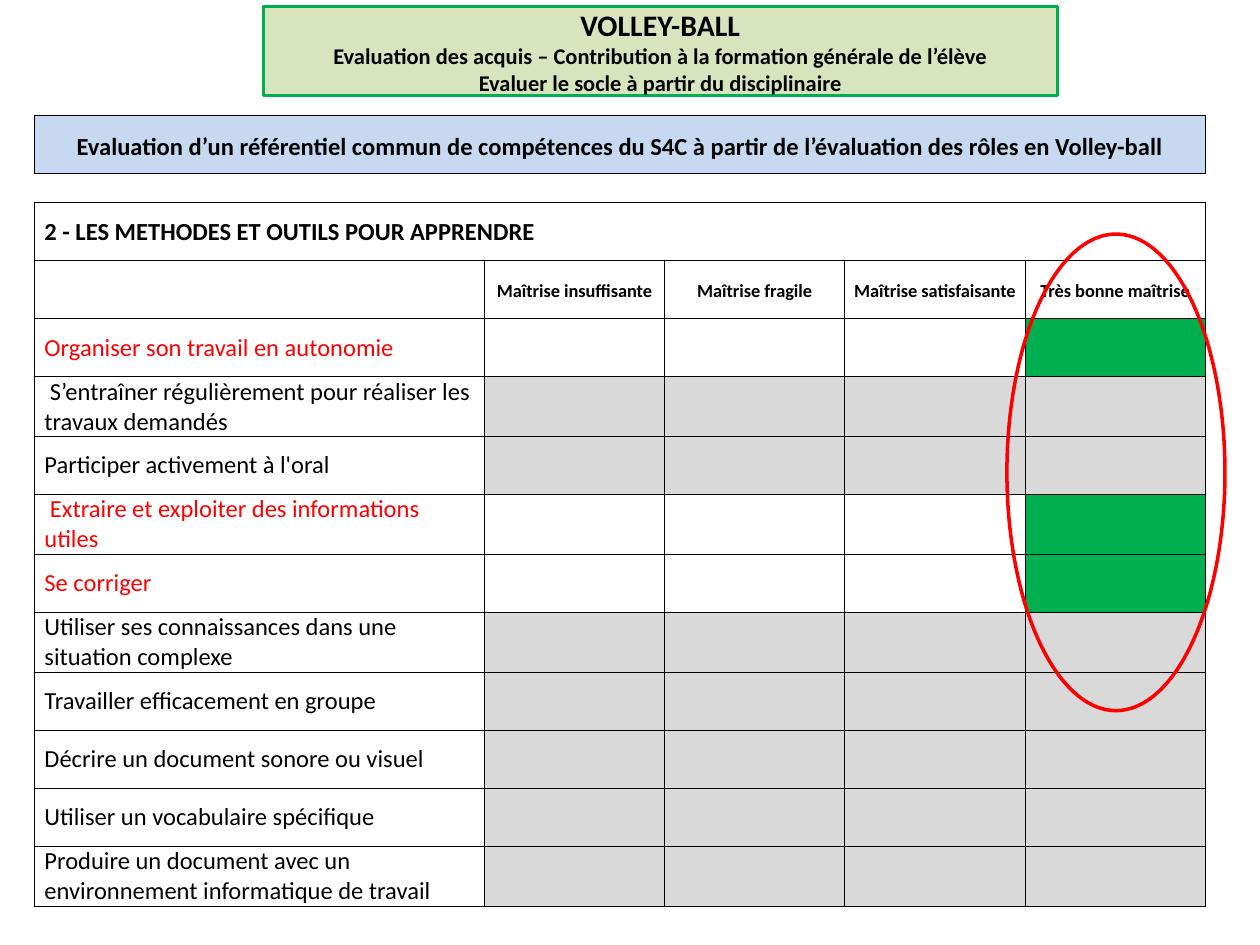
"""Build the volleyball assessment slide with its table of learning skills."""
from dataclasses import dataclass

from lxml.etree import SubElement
from pptx import Presentation
from pptx.dml.color import RGBColor
from pptx.enum.shapes import MSO_SHAPE
from pptx.enum.text import MSO_ANCHOR, MSO_AUTO_SIZE, PP_ALIGN
from pptx.oxml.ns import qn
from pptx.slide import Slide
from pptx.table import Table, _Cell
from pptx.text.text import _Paragraph
from pptx.util import Pt

COLORS = {
    "black": "000000", "white": "FFFFFF", "red": "FF0000", "green": "00B050",
    "pale_green": "D7E4BD", "pale_blue": "C6D9F1", "grey": "D9D9D9",
}
FONT = "Calibri"
ROW_HEIGHT, SPACER_HEIGHT = 33.2, 16.6
SKILL_WIDTH, LEVEL_WIDTH = 257, 103
BANNER_ROW, SPACER_ROW, HEADING_ROW, LEVEL_ROW, FIRST_SKILL_ROW = range(5)


@dataclass(frozen=True)
class Skill:
    name: str
    assessed: bool = False


@dataclass(frozen=True)
class TextStyle:
    size: float
    bold: bool = False
    color: str = "black"
    alignment: PP_ALIGN = PP_ALIGN.LEFT
    line_spacing: float = 1.0


TITLE_LINES = [
    ("VOLLEY-BALL", 17),
    ("Evaluation des acquis – Contribution à la formation générale de l’élève", 12.8),
    ("Evaluer le socle à partir du disciplinaire", 12.8),
]
BANNER = ("Evaluation d’un référentiel commun de compétences du S4C "
          "à partir de l’évaluation des rôles en Volley-ball")
HEADING = "2 - LES METHODES ET OUTILS POUR APPRENDRE"
LEVELS = ["Maîtrise insuffisante", "Maîtrise fragile",
          "Maîtrise satisfaisante", "Très bonne maîtrise"]
SKILLS = [
    Skill("Organiser son travail en autonomie", True),
    Skill(" S’entraîner régulièrement pour réaliser les travaux demandés"),
    Skill("Participer activement à l'oral"),
    Skill(" Extraire et exploiter des informations utiles", True),
    Skill("Se corriger", True),
    Skill("Utiliser ses connaissances dans une situation complexe"),
    Skill("Travailler efficacement en groupe"),
    Skill("Décrire un document sonore ou visuel"),
    Skill("Utiliser un vocabulaire spécifique"),
    Skill("Produire un document avec un environnement informatique de travail"),
]


def rgb(name: str) -> RGBColor:
    return RGBColor.from_string(COLORS[name])


def write(paragraph: _Paragraph, text: str, style: TextStyle) -> None:
    paragraph.text = text
    paragraph.alignment = style.alignment
    paragraph.line_spacing = style.line_spacing
    font = paragraph.font
    font.name, font.size, font.bold = FONT, Pt(style.size), style.bold
    font.color.rgb = rgb(style.color)


def set_borders(cell: _Cell, width: float, sides: str) -> None:
    properties = cell._tc.get_or_add_tcPr()
    for index, side in enumerate("LRTB"):
        line = SubElement(properties, qn(f"a:ln{side}"), w=str(Pt(width)))
        if side in sides:
            fill = SubElement(line, qn("a:solidFill"))
            SubElement(fill, qn("a:srgbClr"), val=COLORS["black"])
        else:
            SubElement(line, qn("a:noFill"))
        properties.insert(index, line)


def fill_cell(cell: _Cell, text: str, style: TextStyle, margin: float = 0) -> None:
    cell.vertical_anchor = MSO_ANCHOR.MIDDLE
    cell.margin_left = cell.margin_right = Pt(margin)
    cell.margin_top = cell.margin_bottom = 0
    write(cell.text_frame.paragraphs[0], text, style)


def paint(cell: _Cell, color: str) -> None:
    cell.fill.solid()
    cell.fill.fore_color.rgb = rgb(color)


def add_title(slide: Slide) -> None:
    title = slide.shapes.title
    title.left, title.top, title.width, title.height = Pt(150.5), Pt(3.6), Pt(453.6), Pt(51.1)
    title.fill.solid()
    title.fill.fore_color.rgb = rgb("pale_green")
    title.line.color.rgb = rgb("green")
    title.line.width = Pt(1.75)
    frame = title.text_frame
    frame.auto_size = MSO_AUTO_SIZE.NONE
    frame.vertical_anchor = MSO_ANCHOR.MIDDLE
    frame.margin_top = frame.margin_bottom = 0
    for index, (text, size) in enumerate(TITLE_LINES):
        paragraph = frame.add_paragraph() if index else frame.paragraphs[0]
        write(paragraph, text, TextStyle(size, bold=True, alignment=PP_ALIGN.CENTER))


def prepare_grid(table: Table) -> None:
    table.first_row = table.horz_banding = False
    for index, column in enumerate(table.columns):
        column.width = Pt(LEVEL_WIDTH if index else SKILL_WIDTH)
    for index, row in enumerate(table.rows):
        row.height = Pt(SPACER_HEIGHT if index == SPACER_ROW else ROW_HEIGHT)
        for cell in row.cells:
            fill_cell(cell, "", TextStyle(8))
            paint(cell, "pale_blue" if index == BANNER_ROW else "white")
            set_borders(cell, 1 if index == BANNER_ROW else 0.5,
                        "TB" if index == SPACER_ROW else "LRTB")
    for index in (BANNER_ROW, SPACER_ROW, HEADING_ROW):
        table.cell(index, 0).merge(table.cell(index, len(LEVELS)))


def add_skill_table(slide: Slide) -> None:
    row_count = FIRST_SKILL_ROW + len(SKILLS)
    table = slide.shapes.add_table(
        row_count, 1 + len(LEVELS), Pt(19.8), Pt(66),
        Pt(SKILL_WIDTH + LEVEL_WIDTH * len(LEVELS)),
        Pt(ROW_HEIGHT * (row_count - 1) + SPACER_HEIGHT)).table
    prepare_grid(table)
    fill_cell(table.cell(BANNER_ROW, 0), BANNER,
              TextStyle(14, True, alignment=PP_ALIGN.CENTER, line_spacing=1.15))
    fill_cell(table.cell(HEADING_ROW, 0), HEADING, TextStyle(14, True), 5.6)
    level_style = TextStyle(10.5, True, alignment=PP_ALIGN.CENTER, line_spacing=1.15)
    for column, level in enumerate(LEVELS, 1):
        fill_cell(table.cell(LEVEL_ROW, column), level, level_style, 4)
    for row, skill in enumerate(SKILLS, FIRST_SKILL_ROW):
        color = "red" if skill.assessed else "black"
        fill_cell(table.cell(row, 0), skill.name, TextStyle(14, color=color), 5.6)
        if skill.assessed:
            paint(table.cell(row, len(LEVELS)), "green")
        else:
            for column in range(1, 1 + len(LEVELS)):
                paint(table.cell(row, column), "grey")


def add_highlight(slide: Slide) -> None:
    ellipse = slide.shapes.add_shape(
        MSO_SHAPE.OVAL, Pt(575.4), Pt(133.8), Pt(124.6), Pt(272.3))
    ellipse.shadow.inherit = False
    ellipse.fill.background()
    ellipse.line.color.rgb = rgb("red")
    ellipse.line.width = Pt(2)


def main() -> None:
    presentation = Presentation()
    presentation.slide_width, presentation.slide_height = Pt(720), Pt(540)
    slide = presentation.slides.add_slide(presentation.slide_layouts[5])
    add_title(slide)
    add_skill_table(slide)
    add_highlight(slide)
    presentation.save("out.pptx")


if __name__ == "__main__":
    main()
